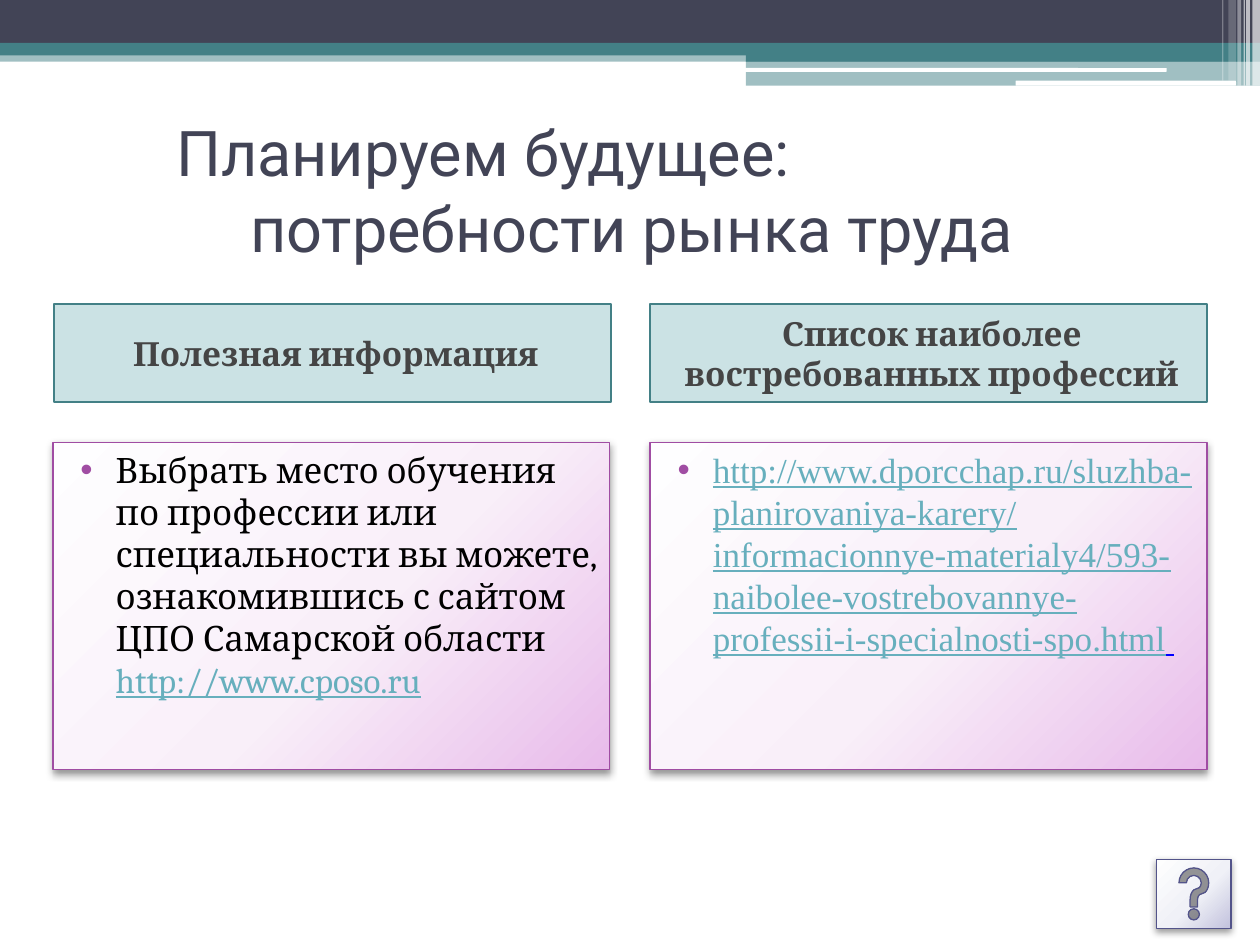
from lxml.etree import SubElement
from pptx import Presentation
from pptx.dml.color import RGBColor
from pptx.enum.shapes import MSO_SHAPE
from pptx.enum.text import MSO_ANCHOR, PP_ALIGN
from pptx.oxml.ns import qn
from pptx.util import Inches, Pt

WHITE = RGBColor(0xFF, 0xFF, 0xFF)
BLACK = RGBColor(0, 0, 0)
BLUE = RGBColor(0, 0, 0xFF)
NAVY = RGBColor(0x42, 0x44, 0x56)
TEAL = RGBColor(0x43, 0x80, 0x86)
AQUA = RGBColor(0x32, 0x8E, 0x97)
GRAY = RGBColor(0x45, 0x45, 0x45)
LINK = RGBColor(0x67, 0xAF, 0xBD)
PLUM = RGBColor(0xA0, 0x4D, 0xA3)
INDIGO = RGBColor(0x53, 0x54, 0x8A)
PINKS = ((0, "FEFEFF"), (55, "F9EFF9"), (100, "E8BBEA"))
LILACS = ((0, "FEFEFE"), (55, "F0F1F7"), (100, "C2C2DD"))

# left, top, width, height, colour, opacity in percent
BARS = (
    (0, 0.4, 10, 0.09, TEAL, 50),
    (0, 0, 10, 0.34, NAVY, 100),
    (0, 0.34, 10, 0.1, TEAL, 100),
    (5.92, 0.39, 4.08, 0.1, TEAL, 100),
    (5.92, 0.48, 4.08, 0.2, TEAL, 50),
)
PILLS = ((5.91, 0.54, 3.35, 0.03), (8.06, 0.64, 1.75, 0.04))
# left, width, height, opacity in percent
STRIPES = (
    (9.94, 0.06, 0.68, 65),
    (9.89, 0.03, 0.68, 65),
    (9.87, 0.01, 0.68, 60),
    (9.82, 0.03, 0.68, 40),
    (9.75, 0.06, 0.64, 20),
    (9.7, 0.01, 0.64, 30),
)
HEADS = (
    (0.43, "Полезная информация"),
    (5.16, "Список наиболее востребованных профессий"),
)
# left, font, runs of (text, colour, underline)
PANELS = (
    (0.42, "Cambria", (
        ("Выбрать место обучения по профессии или специальности вы можете, "
         "ознакомившись с сайтом ЦПО Самарской области ", BLACK, False),
        ("http://www.cposo.ru", LINK, True))),
    (5.16, "Times New Roman", (
        ("http://www.dporcchap.ru/sluzhba-planirovaniya-karery/"
         "informacionnye-materialy4/593-naibolee-vostrebovannye-"
         "professii-i-specialnosti-spo.html", LINK, True),
        (" ", BLUE, True))),
)


def add(parent, tag, **attrs):
    return SubElement(parent, qn(tag), {k: str(v) for k, v in attrs.items()})


class Deck:
    def __init__(self):
        self.file = Presentation()
        self.file.slide_width = Inches(10)
        self.file.slide_height = Inches(7.5)
        self.slide = self.file.slides.add_slide(self.file.slide_layouts[6])

    def shape(self, x, y, w, h, fill, alpha=100, line=None, width=1,
              kind=MSO_SHAPE.RECTANGLE):
        item = self.slide.shapes.add_shape(
            kind, Inches(x), Inches(y), Inches(w), Inches(h))
        item.shadow.inherit = False
        item.fill.solid()
        item.fill.fore_color.rgb = fill
        if alpha < 100:
            color = item.fill._xPr.find(qn("a:solidFill"))[0]
            add(color, "a:alpha", val=alpha * 1000)
        if line is None:
            item.line.fill.background()
        else:
            item.line.color.rgb = line
            item.line.width = Pt(width)
        return item

    def glow(self, x, y, w, h, stops, line, kind=MSO_SHAPE.RECTANGLE):
        """Add a shape with a radial gradient and a soft shadow."""
        item = self.shape(x, y, w, h, WHITE, line=line, width=0.75, kind=kind)
        props = item._element.spPr
        solid = props.find(qn("a:solidFill"))
        grad = add(props, "a:gradFill", rotWithShape=1)
        props.replace(solid, grad)
        steps = add(grad, "a:gsLst")
        for place, color in stops:
            stop = add(steps, "a:gs", pos=place * 1000)
            add(stop, "a:srgbClr", val=color)
        path = add(grad, "a:path", path="circle")
        add(path, "a:fillToRect", l=-40000, t=-90000, r=140000, b=190000)
        shade = add(props.find(qn("a:effectLst")), "a:outerShdw",
                    blurRad=Pt(4.1), dist=Pt(2), dir=5400000, rotWithShape=0)
        add(add(shade, "a:srgbClr", val="000000"), "a:alpha", val=40000)
        return item

    def style(self, run, font, size, color, bold=False, under=False):
        run.font.name = font
        run.font.size = Pt(size)
        run.font.color.rgb = color
        run.font.bold = bold
        run.font.underline = under

    def indent(self, para, left, first=0):
        props = para._p.get_or_add_pPr()
        props.set("marL", str(Inches(left)))
        props.set("indent", str(Inches(first)))
        return props

    def title(self, first, second):
        """Add a two-line title: first line indented, second centred."""
        box = self.slide.shapes.add_textbox(
            Inches(0.43), Inches(0.92), Inches(9.17), Inches(1.17))
        frame = box.text_frame
        frame.word_wrap = True
        frame.vertical_anchor = MSO_ANCHOR.MIDDLE
        frame.text = f"{first}\n{second}"
        top, low = frame.paragraphs
        self.indent(top, 0.87)
        top.alignment = PP_ALIGN.LEFT
        low.alignment = PP_ALIGN.CENTER
        for para in (top, low):
            self.style(para.runs[0], "Roboto", 36, NAVY)

    def head(self, x, text):
        frame = self.shape(x, 2.41, 4.42, 0.78, AQUA, 25, TEAL).text_frame
        frame.word_wrap = True
        frame.vertical_anchor = MSO_ANCHOR.MIDDLE
        frame.text = text
        para = frame.paragraphs[0]
        para.alignment = PP_ALIGN.CENTER
        self.indent(para, 0.05)
        self.style(para.runs[0], "Cambria", 19, GRAY, bold=True)

    def panel(self, x, font, parts):
        frame = self.glow(x, 3.51, 4.42, 2.6, PINKS, PLUM).text_frame
        frame.word_wrap = True
        frame.vertical_anchor = MSO_ANCHOR.TOP
        para = frame.paragraphs[0]
        para.alignment = PP_ALIGN.LEFT
        props = self.indent(para, 0.4, -0.28)
        add(add(props, "a:buClr"), "a:srgbClr", val=PLUM)
        add(props, "a:buFont", typeface="Arial")
        add(props, "a:buChar", char="•")
        for text, color, under in parts:
            run = para.add_run()
            run.text = text
            self.style(run, font, 20, color, under=under)


def main():
    deck = Deck()
    for bar in BARS:
        deck.shape(*bar)
    for pill in PILLS:
        deck.shape(*pill, WHITE, kind=MSO_SHAPE.ROUNDED_RECTANGLE)
    for x, w, h, alpha in STRIPES:
        deck.shape(x, 0, w, h, WHITE, alpha)
    deck.title("Планируем будущее:", "потребности рынка труда")
    for head in HEADS:
        deck.head(*head)
    for panel in PANELS:
        deck.panel(*panel)
    deck.glow(9.18, 6.82, 0.59, 0.55, LILACS, INDIGO,
              MSO_SHAPE.ACTION_BUTTON_HELP)
    deck.file.save("out.pptx")


if __name__ == "__main__":
    main()
